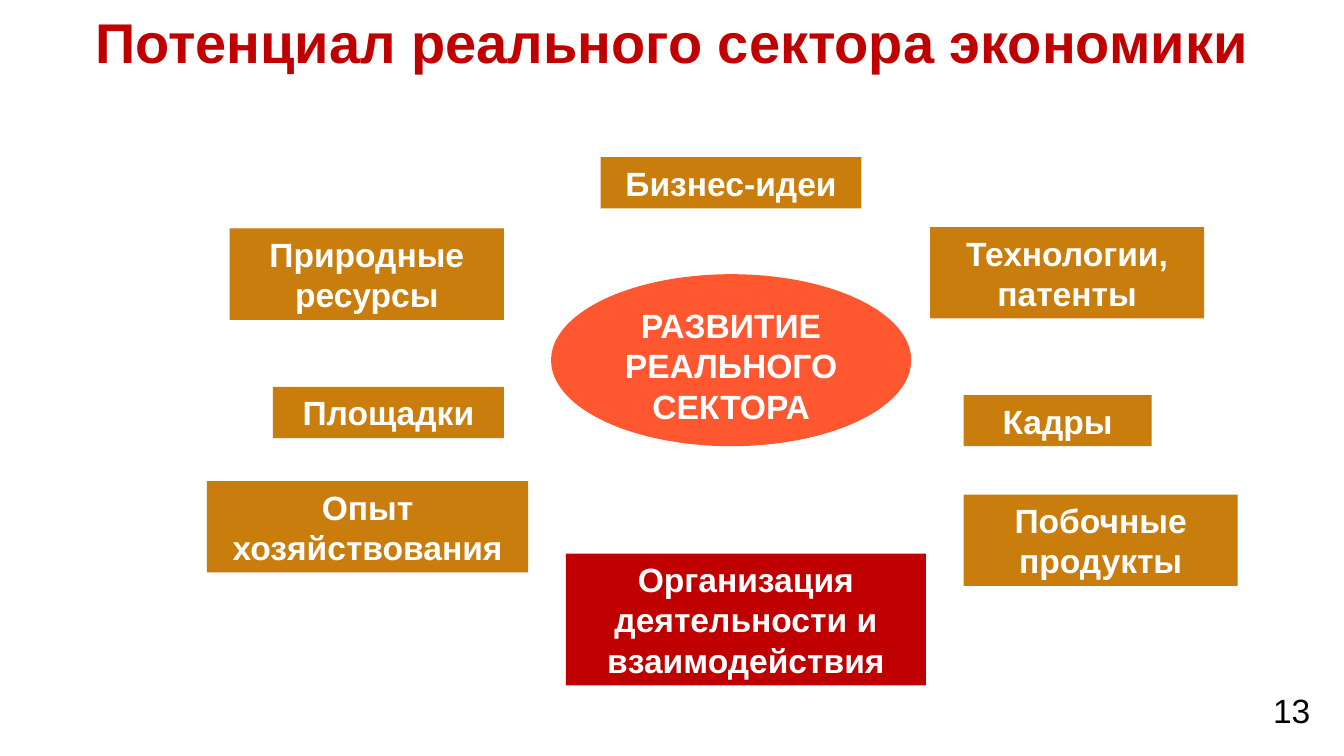
"""Build the slide on the potential of the real sector of the economy."""
from pptx import Presentation
from pptx.dml.color import RGBColor
from pptx.enum.shapes import MSO_SHAPE
from pptx.enum.text import MSO_ANCHOR, MSO_AUTO_SIZE, PP_ALIGN
from pptx.util import Inches, Pt

RECT, OVAL = MSO_SHAPE.RECTANGLE, MSO_SHAPE.OVAL
TOP = MSO_ANCHOR.TOP
FIT, FIXED = MSO_AUTO_SIZE.SHAPE_TO_FIT_TEXT, MSO_AUTO_SIZE.NONE
CENTER, RIGHT = PP_ALIGN.CENTER, PP_ALIGN.RIGHT

RED = RGBColor(0xC0, 0x00, 0x00)
OCHRE = RGBColor(0xC9, 0x7D, 0x0D)
ORANGE = RGBColor(0xFF, 0x57, 0x2F)
WHITE = RGBColor(0xFF, 0xFF, 0xFF)
BLACK = RGBColor(0x00, 0x00, 0x00)

TITLE = "Потенциал реального сектора экономики"
PAGE_NUMBER = "13"
CORE = ("РАЗВИТИЕ РЕАЛЬНОГО СЕКТОРА", 4.1, 2.04, 2.68, 1.28)
ORGANIZATION = ("Организация деятельности и взаимодействия", 4.21, 4.12, 2.68, 3)
RESOURCES = [
    ("Бизнес-идеи", 4.47, 1.17, 1.94, 1),
    ("Технологии, патенты", 6.92, 1.69, 2.04, 2),
    ("Кадры", 7.17, 2.94, 1.4, 1),
    ("Побочные продукты", 7.17, 3.68, 2.04, 2),
    ("Опыт хозяйствования", 1.54, 3.58, 2.39, 2),
    ("Площадки", 2.03, 2.88, 1.72, 1),
    ("Природные ресурсы", 1.71, 1.7, 2.04, 2),
]
SLIDE_WIDTH = 10
SLIDE_HEIGHT = SLIDE_WIDTH * 9 / 16
LINE_HEIGHT, BOX_PADDING = 0.3, 0.08


def write(shape, text, size, color, bold=True, align=CENTER, fit=FIXED):
    tf = shape.text_frame
    tf.text = text
    tf.word_wrap = True
    tf.auto_size = fit
    tf.vertical_anchor = TOP
    tf.margin_left = tf.margin_right = Inches(0.07)
    tf.margin_top = tf.margin_bottom = Inches(0.04)
    p = tf.paragraphs[0]
    p.alignment = align
    font = p.runs[0].font
    font.name, font.size, font.bold = "Arial", Pt(size), bold
    font.color.rgb = color
    return p


def add_figure(s, kind, text, left, top, width, height, fill, fit=FIXED):
    shape = s.shapes.add_shape(
        kind, Inches(left), Inches(top), Inches(width), Inches(height))
    shape.shadow.inherit = False
    shape.fill.solid()
    shape.fill.fore_color.rgb = fill
    shape.line.fill.background()
    return write(shape, text, 18, WHITE, fit=fit)


def add_box(s, text, left, top, width, lines, fill):
    height = lines * LINE_HEIGHT + BOX_PADDING
    p = add_figure(s, RECT, text, left, top, width, height, fill, FIT)
    p.space_after = Pt(9)


def main():
    prs = Presentation()
    prs.slide_width = Inches(SLIDE_WIDTH)
    prs.slide_height = Inches(SLIDE_HEIGHT)
    s = prs.slides.add_slide(prs.slide_layouts[5])

    title = s.shapes.title
    title.left, title.top = Inches(0.38), Inches(0.06)
    title.width, title.height = Inches(9.24), Inches(0.84)
    write(title, TITLE, 30, RED).line_spacing = 0.93

    number = s.shapes.add_textbox(
        Inches(8.07), Inches(5.12), Inches(1.75), Inches(0.39))
    write(number, PAGE_NUMBER, 18, BLACK, False, RIGHT).line_spacing = 0.93

    add_figure(s, OVAL, *CORE, ORANGE)
    for resource in RESOURCES:
        add_box(s, *resource, OCHRE)
    add_box(s, *ORGANIZATION, RED)

    prs.save("out.pptx")


if __name__ == "__main__":
    main()
